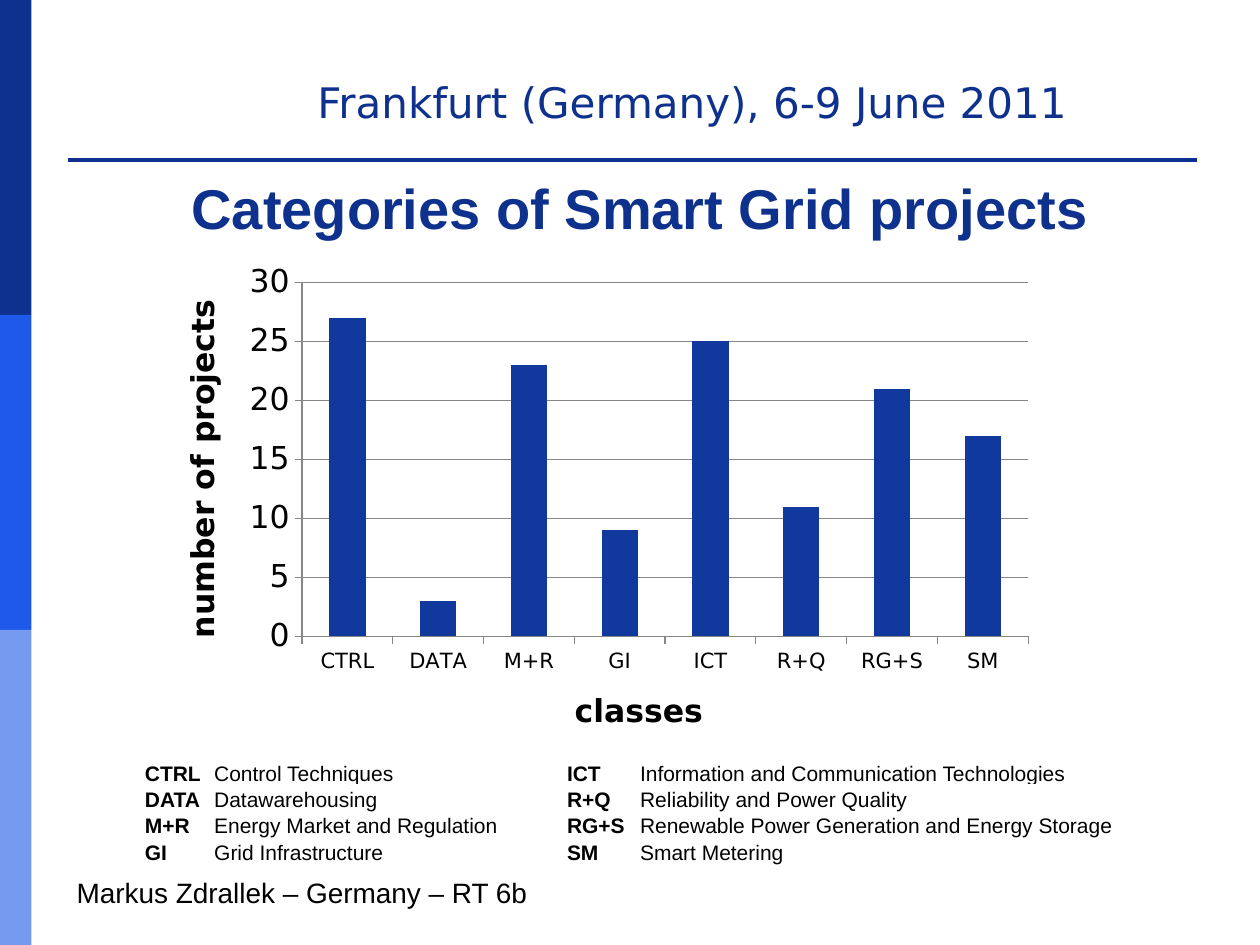
from pptx import Presentation
from pptx import util as u
from pptx.chart.data import CategoryChartData
from pptx.dml.color import RGBColor
from pptx.enum import chart as charts, shapes, text
from pptx.oxml import parse_xml
from pptx.oxml.ns import nsdecls, qn

COLORS = {"navy": "0E318D", "blue": "1F59E9", "light": "779AF1", "bar": "10389D",
          "gray": "878787", "black": "000000", "white": "FFFFFF"}

PROJECTS = {"CTRL": 27, "DATA": 3, "M+R": 23, "GI": 9,
            "ICT": 25, "R+Q": 11, "RG+S": 21, "SM": 17}
LEGEND = [
    ("CTRL", "Control Techniques", "ICT", "Information and Communication Technologies"),
    ("DATA", "Datawarehousing", "R+Q", "Reliability and Power Quality"),
    ("M+R", "Energy Market and Regulation", "RG+S", "Renewable Power Generation and Energy Storage"),
    ("GI", "Grid Infrastructure", "SM", "Smart Metering"),
]
LEGEND_WIDTHS = [0.55, 2.8, 0.58, 4.13]
LEGEND_ROW = 0.21
# text, box, font format, color, paragraph format
TEXTS = [
    ("Frankfurt (Germany), 6-9 June 2011", (2.42, 0.56, 6.58, 0.5),
     {"name": "DejaVu Sans", "size": u.Pt(24)}, "navy", {}),
    ("Markus Zdrallek – Germany – RT 6b", (0.51, 6.9, 7.88, 0.37),
     {"name": "Arial", "size": u.Pt(16)}, "black", {}),
    ("Categories of Smart Grid projects", (0.59, 1.39, 8.98, 0.59),
     {"name": "Arial", "size": u.Pt(32), "bold": True}, "navy",
     {"alignment": text.PP_ALIGN.CENTER, "line_spacing": 0.9}),
]
PLOT_LAYOUT = {"x": 0.166, "y": 0.055, "w": 0.813, "h": 0.699}


def rgb(name):
    return RGBColor.from_string(COLORS[name])


def inches(*values):
    return [u.Inches(value) for value in values]


def set_all(target, values):
    for name, value in values.items():
        setattr(target, name, value)


def set_font(font, color, **values):
    set_all(font, values)
    font.color.rgb = rgb(color)


def add_plain_table(left, top, widths, row_height, row_count):
    table = slide.shapes.add_table(
        row_count, len(widths),
        *inches(left, top, sum(widths), row_height * row_count)).table
    table.first_row = table.horz_banding = False
    for column, width in zip(table.columns, widths):
        column.width = u.Inches(width)
    for row in table.rows:
        row.height = u.Inches(row_height)
    return table


def set_borders(cell, color, **widths):
    """Draw the sides L, R, T, B at widths in points; 0 means no line."""
    properties = cell._tc.get_or_add_tcPr()
    for index, side in enumerate("LRTB"):
        width = widths.get(side, 0)
        fill = (f'<a:solidFill><a:srgbClr val="{COLORS[color]}"/></a:solidFill>'
                if width else "<a:noFill/>")
        properties.insert(index, parse_xml(
            f'<a:ln{side} {nsdecls("a")} w="{u.Pt(width)}">{fill}</a:ln{side}>'))


presentation = Presentation()
presentation.slide_width, presentation.slide_height = inches(10, 7.5)
slide = presentation.slides.add_slide(presentation.slide_layouts[6])

# Side bands
for index, color in enumerate(("navy", "blue", "light")):
    band = slide.shapes.add_shape(shapes.MSO_SHAPE.RECTANGLE,
                                  *inches(0, 2.5 * index, 0.25, 2.5))
    band.shadow.inherit = False
    band.fill.solid()
    band.fill.fore_color.rgb = rgb(color)
    band.line.fill.background()

# Header rule: bottom border of a one-cell table
rule_cell = add_plain_table(0.54, 1.07, [8.96], 0.2, 1).cell(0, 0)
rule_cell.fill.background()
set_all(rule_cell, {"margin_top": 0, "margin_bottom": 0})
set_borders(rule_cell, "navy", B=2.25)
rule_cell.text_frame.paragraphs[0]._p.append(
    parse_xml(f'<a:endParaRPr {nsdecls("a")} sz="800"/>'))

# Header, footer and title
for words, box, font_format, color, paragraph_format in TEXTS:
    frame = slide.shapes.add_textbox(*inches(*box)).text_frame
    frame.word_wrap = True
    paragraph = frame.paragraphs[0]
    paragraph.text = words
    set_all(paragraph, paragraph_format)
    set_font(paragraph.runs[0].font, color, **font_format)

# Column chart
data = CategoryChartData()
data.categories = list(PROJECTS)
data.add_series("Series 1", list(PROJECTS.values()))
chart = slide.shapes.add_chart(charts.XL_CHART_TYPE.COLUMN_CLUSTERED,
                               *inches(1.22, 2.02, 7.09, 4.02), data).chart
chart.has_legend = False
chart.has_title = False
set_font(chart.font, "black", name="DejaVu Sans", size=u.Pt(18))
plot = chart.plots[0]
plot.gap_width = 150
plot.vary_by_categories = False
bars = plot.series[0].format.fill
bars.solid()
bars.fore_color.rgb = rgb("bar")

for axis, title, size in ((chart.category_axis, "classes", 12),
                          (chart.value_axis, "number of projects", 18)):
    axis.major_tick_mark = charts.XL_TICK_MARK.OUTSIDE
    axis.minor_tick_mark = charts.XL_TICK_MARK.NONE
    axis.format.line.color.rgb = rgb("gray")
    set_font(axis.tick_labels.font, "black", name="DejaVu Sans", size=u.Pt(size))
    title_frame = axis.axis_title.text_frame
    title_frame.text = title
    set_font(title_frame.paragraphs[0].runs[0].font, "black",
             name="DejaVu Sans", size=u.Pt(18), bold=True)
set_all(chart.value_axis, {"minimum_scale": 0, "maximum_scale": 30,
                           "major_unit": 5, "has_major_gridlines": True})
chart.value_axis.major_gridlines.format.line.color.rgb = rgb("gray")

# Fixed inner plot area
plot_area = chart._chartSpace.chart.plotArea
for old_layout in plot_area.findall(qn("c:layout")):
    plot_area.remove(old_layout)
modes = '<c:layoutTarget val="inner"/><c:xMode val="edge"/><c:yMode val="edge"/>'
sizes = "".join(f'<c:{key} val="{value}"/>' for key, value in PLOT_LAYOUT.items())
plot_area.insert(0, parse_xml(
    f'<c:layout {nsdecls("c")}><c:manualLayout>{modes}{sizes}</c:manualLayout></c:layout>'))

# Table of class names
table = add_plain_table(1.14, 6.03, LEGEND_WIDTHS, LEGEND_ROW, len(LEGEND))
for row_index, (row, words) in enumerate(zip(table.rows, LEGEND)):
    for index, (cell, word) in enumerate(zip(row.cells, words)):
        cell.fill.background()
        set_all(cell, {"margin_left": u.Inches(0.01), "margin_right": u.Inches(0.01),
                       "margin_top": u.Inches(0.01), "margin_bottom": 0,
                       "vertical_anchor": text.MSO_ANCHOR.MIDDLE})
        set_borders(cell, "white", L=1, R=1, T=3 if row_index == 1 else 1,
                    B=3 if row_index == 0 else 1)
        cell.text = word
        set_font(cell.text_frame.paragraphs[0].runs[0].font, "black",
                 name="Arial", size=u.Pt(12), bold=index % 2 == 0)

presentation.save("out.pptx")
